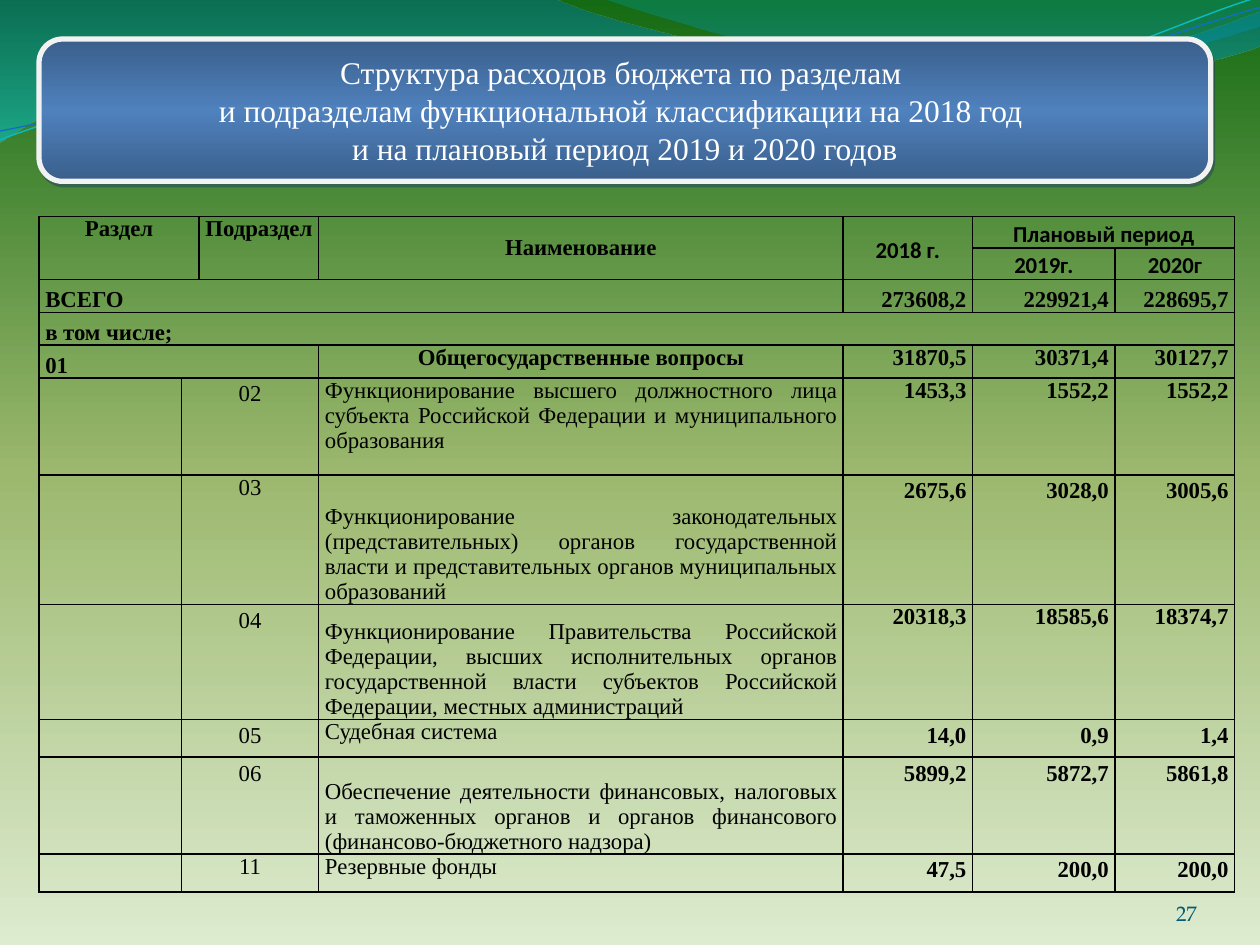
from math import cos, radians, sin

from lxml.etree import SubElement
from pptx import Presentation
from pptx.dml.color import RGBColor
from pptx.enum.shapes import MSO_SHAPE as Shape
from pptx.enum.text import MSO_ANCHOR as Anchor, PP_ALIGN as Align
from pptx.oxml import parse_xml
from pptx.oxml.ns import nsdecls, qn
from pptx.util import Inches, Pt

color = RGBColor.from_string
SERIF = "Times New Roman"


def blend(fill, root, stops, angle, change="alpha"):
    """Fill with (position, colour, percent of change) stops; root holds the XML."""
    fill.gradient()
    grad = root.xpath(".//a:gradFill")[0]
    for part in list(grad):
        grad.remove(part)
    group = SubElement(grad, qn("a:gsLst"))
    for pos, tone, share in stops:
        stop = SubElement(group, qn("a:gs"), pos=str(pos * 1000))
        rgb = SubElement(stop, qn("a:srgbClr"), val=tone)
        if share < 100:
            SubElement(rgb, qn("a:" + change), val=str(share * 1000))
    SubElement(grad, qn("a:lin"), ang=str(angle * 60000), scaled="0")


def put(row, col, text, align, bold=True, anchor=Anchor.TOP, loose=False, font=SERIF):
    """Write one table cell and return its paragraph."""
    cell = table.cell(row, col)
    cell.vertical_anchor = anchor
    para = cell.text_frame.paragraphs[0]
    para.alignment = align
    if loose:
        para.line_spacing = 1.15
        para.space_after = Pt(10)
    run = para.add_run()
    run.text = text
    run.font.name = font
    run.font.size = Pt(13)
    run.font.bold = bold
    run.font.color.rgb = color("000000")
    return para


prs = Presentation()
prs.slide_width, prs.slide_height = Inches(10), Inches(7.5)
slide = prs.slides.add_slide(prs.slide_layouts[6])
shapes = slide.shapes
blend(slide.background.fill, slide.element,
      [(0, "DDEBCF", 100), (50, "9CB86E", 100), (100, "156B13", 100)], 270)

# Waves: box, turn, steps, gradient, line.
# A step of two numbers is straight, one of six is a Bezier curve.
waves = [
    ((-0.01, -0.01, 10.02, 1.14), 0,
     [(0, -0.01), (4.4, -0.01), (4.76, 0.17, 6.64, 0.63, 7.58, 0.63),
      (8.53, 0.63, 9.58, 0.26, 10, 0.09), (10.01, 0.36),
      (9.83, 0.44, 8.7, 0.76, 7.46, 0.75), (6.22, 0.75, 3.82, 0.28, 2.57, 0.34),
      (1.29, 0.35, 0.46, 0.83, -0.01, 1.13), (0, -0.01)],
     [(0, "0074A1", 45), (100, "00C6CF", 55)], None),
    ((4.79, -0.01, 5.21, 0.7), 0,
     [(4.79, -0.01), (5.09, 0.11, 6.82, 0.62, 7.69, 0.65),
      (8.56, 0.69, 9.61, 0.32, 10, 0.21), (10, 0), (4.79, -0.01)],
     [(0, "00A1A9", 30), (80, "008BBF", 45)], None),
    ((-0.02, 0.22, 10.02, 0.71), -2.7,
     [(0, 1.11), (0.48, 0.93, 1.58, 0.57, 2.77, 0.52),
      (3.95, 0.47, 5.93, 0.89, 7.13, 0.8), (8.33, 0.71, 9.38, 0.15, 9.98, -0.02)],
     None, ("0AB8BF", 0.85)),
    ((-0.02, 0.3, 10.03, 0.58), -2.7,
     [(0, 1.04), (0.47, 0.96, 1.64, 0.61, 2.83, 0.56),
      (4.03, 0.51, 5.97, 0.83, 7.17, 0.75), (8.36, 0.67, 9.41, 0.21, 10, 0.06)],
     None, ("0F6FC6", 0.75)),
]
for (x, y, w, h), turn, steps, stops, stroke in waves:
    pen = shapes.build_freeform(int(x * 1000), int(y * 1000), scale=Inches(1) / 1000)
    pen.add_line_segments([(x * 1000 + w * 1000, y * 1000 + h * 1000)], close=False)
    wave = pen.convert_to_shape()
    wave.left, wave.top, wave.width, wave.height = (Inches(n) for n in (x, y, w, h))
    wave.rotation = turn % 360
    wave.shadow.inherit = False
    track = wave.element.xpath(".//a:path")[0]
    for part in list(track):
        track.remove(part)
    track.set("w", str(round(w * 1000)))
    track.set("h", str(round(h * 1000)))
    c, s = cos(radians(-turn)), sin(radians(-turn))
    for i, step in enumerate(steps):
        kind = "cubicBezTo" if len(step) == 6 else "lnTo" if i else "moveTo"
        node = SubElement(track, qn("a:" + kind))
        for px, py in zip(step[::2], step[1::2]):
            dx, dy = px - x - w / 2, py - y - h / 2
            SubElement(node, qn("a:pt"), x=str(round((w / 2 + dx * c - dy * s) * 1000)),
                       y=str(round((h / 2 + dx * s + dy * c) * 1000)))
    if stops:
        SubElement(track, qn("a:close"))
        blend(wave.fill, wave.element, stops, 90)
        wave.line.fill.background()
    else:
        wave.fill.background()
        wave.line.color.rgb = color(stroke[0])
        wave.line.width = Pt(stroke[1])

# Slide number
box = shapes.add_textbox(Inches(8.67), Inches(6.95), Inches(0.83), Inches(0.4))
frame = box.text_frame
frame.word_wrap = True
frame.vertical_anchor = Anchor.BOTTOM
frame.margin_left = frame.margin_right = frame.margin_top = frame.margin_bottom = 0
para = frame.paragraphs[0]
para.alignment = Align.RIGHT
run = para.add_run()
run.text = "27"
run.font.name = "TeX Gyre Pagella"
run.font.size = Pt(12)
run.font.color.rgb = color("045D75")

# Title banner
banner = shapes.add_shape(Shape.FLOWCHART_ALTERNATE_PROCESS, Inches(0.31), Inches(0.31),
                          Inches(9.3), Inches(1.13))
blend(banner.fill, banner.element,
      [(0, "4F81BD", 50), (50, "4F81BD", 100), (100, "4F81BD", 50)], 90, "shade")
banner.line.color.rgb = color("F2F2F2")
banner.line.width = Pt(3)
banner.element.spPr.append(parse_xml(
    f'<a:effectLst {nsdecls("a")}><a:outerShdw dist="28000" dir="3780000" algn="ctr" '
    'rotWithShape="0"><a:srgbClr val="243F60"><a:alpha val="50000"/></a:srgbClr>'
    '</a:outerShdw></a:effectLst>'))
frame = banner.text_frame
frame.word_wrap = True
frame.vertical_anchor = Anchor.MIDDLE
lines = ["Структура расходов бюджета по разделам ",
         "и подразделам функциональной классификации на 2018 год ",
         "и на плановый период 2019 и 2020 годов"]
for i, line in enumerate(lines):
    para = frame.add_paragraph() if i else frame.paragraphs[0]
    para.alignment = Align.CENTER
    run = para.add_run()
    run.text = line
    run.font.name = SERIF
    run.font.size = Pt(18)
    run.font.color.rgb = color("FFFFFF")

# Budget table
wide = [1.13, 0.11, 0.95, 4.16, 1.03, 1.13, 0.95]
high = [0.25, 0.25, 0.26, 0.26, 0.26, 0.77, 1.03, 0.91, 0.3, 0.77, 0.3]
table = shapes.add_table(len(high), len(wide), Inches(0.31), Inches(1.72),
                         Inches(sum(wide)), Inches(sum(high))).table
table.first_row = table.horz_banding = False
for col, size in zip(table.columns, wide):
    col.width = Inches(size)
for row, size in zip(table.rows, high):
    row.height = Inches(size)
for cell in table.iter_cells():
    cell.margin_left = cell.margin_right = Inches(0.05)
    cell.margin_top = cell.margin_bottom = 0
    cell.text_frame.paragraphs[0]._p.get_or_add_endParaRPr().set("sz", "1300")
    for side in "LRTB":
        cell._tc.get_or_add_tcPr().append(parse_xml(
            f'<a:ln{side} {nsdecls("a")} w="12700"><a:solidFill><a:srgbClr val="000000"/>'
            f'</a:solidFill></a:ln{side}>'))
    cell.fill.background()

spans = [(0, 0, 1, 1), (0, 2, 1, 2), (0, 3, 1, 3), (0, 4, 1, 4), (0, 5, 0, 6),
         (2, 0, 2, 3), (3, 0, 3, 6), (4, 0, 4, 2)]
spans += [(row, 1, row, 2) for row in range(5, len(high))]
for top, left, low, right in spans:
    table.cell(top, left).merge(table.cell(low, right))

for col, text, anchor in [(0, "Раздел", Anchor.TOP), (2, "Подраздел", Anchor.TOP),
                          (3, "Наименование", Anchor.MIDDLE)]:
    para = put(0, col, text, Align.CENTER, anchor=anchor)
    para.space_before, para.space_after = Pt(12), Pt(3)
for row, col, text, anchor in [(0, 4, "2018 г.", Anchor.MIDDLE),
                               (0, 5, "Плановый период", Anchor.TOP),
                               (1, 5, "2019г.", Anchor.TOP), (1, 6, "2020г", Anchor.TOP)]:
    put(row, col, text, Align.CENTER, anchor=anchor, loose=True, font="Calibri")

for row, text in enumerate(["ВСЕГО", "в том числе;", "01"], 2):
    put(row, 0, text, Align.LEFT, anchor=Anchor.BOTTOM)
put(4, 3, "Общегосударственные вопросы", Align.CENTER)
for row, sums, anchor in [(2, "273608,2 229921,4 228695,7", Anchor.BOTTOM),
                          (4, "31870,5 30371,4 30127,7", Anchor.TOP)]:
    for col, text in enumerate(sums.split(), 4):
        put(row, col, text, Align.RIGHT, anchor=anchor)

# Code, loose code, name, name anchor, sums, loose sums
items = [
    ("02", True, "Функционирование высшего должностного лица субъекта Российской Федерации "
     "и муниципального образования", Anchor.TOP, "1453,3 1552,2 1552,2", False),
    ("03", False, "Функционирование законодательных (представительных) органов "
     "государственной власти и представительных органов муниципальных образований",
     Anchor.BOTTOM, "2675,6 3028,0 3005,6", True),
    ("04", True, "Функционирование Правительства Российской Федерации, высших "
     "исполнительных органов государственной власти субъектов Российской Федерации, "
     "местных администраций", Anchor.BOTTOM, "20318,3 18585,6 18374,7", False),
    ("05", True, "Судебная система", Anchor.TOP, "14,0 0,9 1,4", True),
    ("06", True, "Обеспечение деятельности финансовых, налоговых и таможенных органов "
     "и органов финансового (финансово-бюджетного надзора)", Anchor.BOTTOM,
     "5899,2 5872,7 5861,8", True),
    ("11", False, "Резервные фонды", Anchor.TOP, "47,5 200,0 200,0", True),
]
for row, (code, airy, name, anchor, sums, loose) in enumerate(items, 5):
    put(row, 1, code, Align.CENTER, bold=False, loose=airy)
    put(row, 3, name, Align.JUSTIFY, bold=False, anchor=anchor)
    for col, text in enumerate(sums.split(), 4):
        put(row, col, text, Align.RIGHT, loose=loose)

prs.save("out.pptx")
